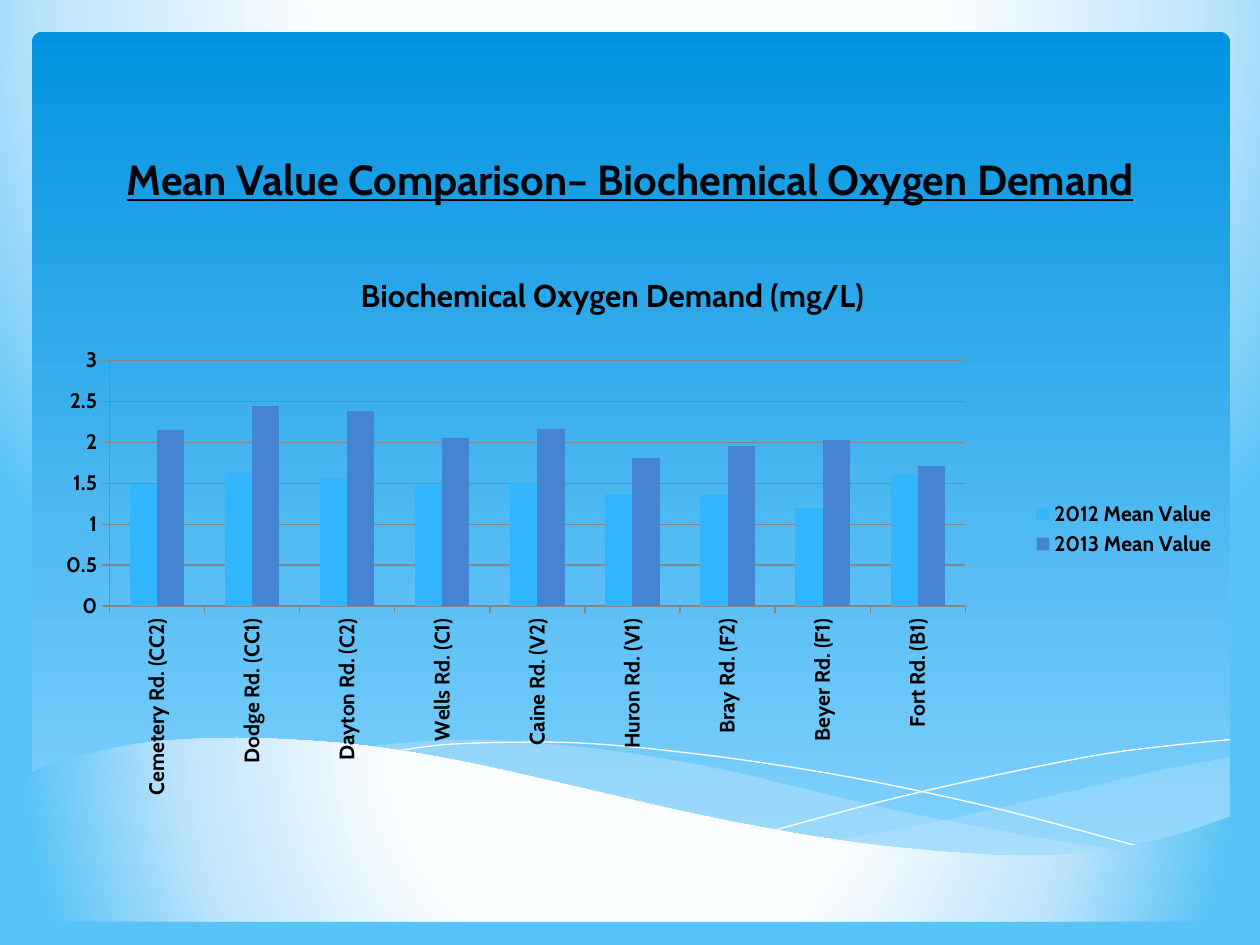
from lxml import etree
from pptx import Presentation
from pptx.chart.data import CategoryChartData
from pptx.dml.color import RGBColor
from pptx.enum.chart import XL_CHART_TYPE, XL_LEGEND_POSITION, XL_TICK_MARK
from pptx.enum.shapes import MSO_SHAPE
from pptx.enum.text import MSO_ANCHOR, MSO_AUTO_SIZE, PP_ALIGN
from pptx.oxml import parse_xml
from pptx.oxml.ns import nsdecls, qn
from pptx.util import Cm, Pt

COLUMN = XL_CHART_TYPE.COLUMN_CLUSTERED
LEGEND_RIGHT = XL_LEGEND_POSITION.RIGHT
TICK_OUT = XL_TICK_MARK.OUTSIDE
ROUNDED = MSO_SHAPE.ROUNDED_RECTANGLE
BOTTOM = MSO_ANCHOR.BOTTOM
NO_FIT = MSO_AUTO_SIZE.NONE
CENTER = PP_ALIGN.CENTER

FONT = "Cabin"
COLORS = {
    "title": "01060E", "text": "000000", "grid": "868686", "line": "FFFFFF",
    "wave": "C6E7FC", "panel_top": "0293E0", "panel_bottom": "83D3FE",
    "glow": "FAFDFE", "sky": "BEE4FC", "edge": "58C3F6",
    "2012": "31B6FD", "2013": "4584D3",
}
RGB = {name: RGBColor.from_string(value) for name, value in COLORS.items()}


def set_glow(fill, parent):
    """Fill with a radial gradient centred above the slide."""
    fill.gradient()
    old = parent.find(qn("a:gradFill"))
    stops = "".join(
        f'<a:gs pos="{pos * 1000}"><a:srgbClr val="{COLORS[name]}"/></a:gs>'
        for pos, name in ((40, "glow"), (74, "sky"), (100, "edge")))
    parent.replace(old, parse_xml(
        f'<a:gradFill rotWithShape="1" {nsdecls("a")}><a:gsLst>{stops}</a:gsLst>'
        '<a:path path="circle"><a:fillToRect l="20000" t="-40000" r="20000" '
        'b="140000"/></a:path></a:gradFill>'))


def add_curve(shapes, edges, close=True, steps=5):
    """Draw smooth edges (Catmull-Rom, points in cm) as one freeform."""
    pts = []
    for edge in edges:
        knots = [edge[0], *edge, edge[-1]]
        for a, b, c, d in zip(knots, knots[1:], knots[2:], knots[3:]):
            for t in (i / steps for i in range(steps)):
                pts.append([Cm(0.5 * (
                    2 * q + (r - p) * t + (2 * p - 5 * q + 4 * r - s) * t ** 2
                    + (3 * q - p - 3 * r + s) * t ** 3))
                    for p, q, r, s in zip(a, b, c, d)])
        pts.append([Cm(v) for v in edge[-1]])
    builder = shapes.build_freeform(*pts[0])
    builder.add_line_segments(pts[1:], close=close)
    sp = builder.convert_to_shape()
    sp.shadow.inherit = False
    if close:
        sp.line.fill.background()
    else:
        sp.fill.background()
        sp.line.color.rgb = RGB["line"]
        sp.line.width = Pt(0)
    return sp


prs = Presentation()
prs.slide_width, prs.slide_height = Cm(25.4), Cm(19.05)
slide = prs.slides.add_slide(prs.slide_layouts[5])
shapes = slide.shapes

# Background and blue panel
bg_fill = slide.background.fill
bg_fill.gradient()
set_glow(bg_fill, slide._element.cSld.find(qn("p:bg")).find(qn("p:bgPr")))
sp = shapes.add_shape(ROUNDED, Cm(0.64), Cm(0.64), Cm(24.16), Cm(16.76))
sp.adjustments[0] = 0.013
sp.shadow.inherit = False
sp.line.fill.background()
sp.fill.gradient()
sp.fill.gradient_angle = 270
for stop, name in zip(sp.fill.gradient_stops, ("panel_top", "panel_bottom")):
    stop.color.rgb = RGB[name]

# Translucent waves
right_wave = [
    [(24.8, 15.27), (23.42, 15.52), (21.89, 15.88), (19.81, 16.36),
     (18.54, 16.64), (16.81, 16.94)],
    [(16.81, 16.94), (17.93, 17.09), (19.25, 17.22), (20.7, 17.27),
     (21.95, 17.2), (23.04, 17.04), (23.98, 16.79), (24.8, 16.48)]]
middle_wave = [
    [(7.29, 15.06), (8.33, 14.96), (9.65, 14.91), (11.23, 15.01), (12.75, 15.19),
     (14.48, 15.49), (16, 15.85), (17.96, 16.31), (19.71, 16.66),
     (21.29, 16.94), (22.71, 17.15)],
    [(22.71, 17.15), (21.56, 17.25), (20.24, 17.27), (18.72, 17.2),
     (16.92, 16.97), (15.29, 16.69), (13.46, 16.31), (11.43, 15.85),
     (9.73, 15.47), (8.2, 15.19), (7.29, 15.06)]]
for edges, alpha in ((right_wave, 29), (middle_wave, 40)):
    sp = add_curve(shapes, edges)
    sp.fill.solid()
    sp.fill.fore_color.rgb = RGB["wave"]
    color = sp._element.spPr.find(qn("a:solidFill"))[0]
    etree.SubElement(color, qn("a:alpha")).set("val", str(alpha * 1000))

# White hairlines
falling = [(7.87, 15.16), (8.97, 15.01), (10.59, 14.96), (11.91, 14.99),
           (13.54, 15.14), (15.47, 15.39), (17.68, 15.77), (20.22, 16.33),
           (23.06, 17.09)]
rising = [(15.6, 16.74), (17.68, 16.18), (19.74, 15.7), (22.02, 15.24),
          (23.5, 15.04), (24.8, 14.91)]
for edge in (falling, rising):
    add_curve(shapes, [edge], close=False)

# Bottom wave
crest = [(24.8, 16.46), (23.62, 16.87), (22.23, 17.15), (20.55, 17.25),
         (18.44, 17.12), (16.46, 16.87), (14.1, 16.43), (11.35, 15.8),
         (9.27, 15.34), (7.42, 15.04), (5.84, 14.91), (4.5, 14.88),
         (3.02, 14.96), (1.93, 15.16), (1.02, 15.42), (0.58, 15.62)]
sp = add_curve(shapes, [crest, [(0.58, 18.57), (24.8, 18.57)]])
set_glow(sp.fill, sp._element.spPr)

# Title, brought in front of the waves
title = shapes.title
shapes._spTree.append(title._element)
title.left, title.top, title.width, title.height = Cm(1.9), Cm(2.34), Cm(21.6), Cm(1.9)
tf = title.text_frame
tf.text = "Mean Value Comparison– Biochemical Oxygen Demand"
tf.word_wrap = True
tf.auto_size = NO_FIT
tf.vertical_anchor = BOTTOM
p = tf.paragraphs[0]
p.alignment = CENTER
font = p.runs[0].font
font.name, font.size, font.bold, font.underline = FONT, Pt(24), True, True
font.color.rgb = RGB["title"]

# Chart
data = CategoryChartData()
data.categories = [
    "Cemetery Rd. (CC2)", "Dodge Rd. (CC1)", "Dayton Rd. (C2)",
    "Wells Rd. (C1)", "Caine Rd. (V2)", "Huron Rd. (V1)",
    "Bray Rd. (F2)", "Beyer Rd. (F1)", "Fort Rd. (B1)"]
data.add_series("2012 Mean Value", (1.49, 1.63, 1.56, 1.47, 1.51, 1.37, 1.36, 1.2, 1.61))
data.add_series("2013 Mean Value", (2.15, 2.44, 2.38, 2.05, 2.16, 1.81, 1.96, 2.03, 1.71))
chart = shapes.add_chart(COLUMN, Cm(0.64), Cm(4.95), Cm(24.13), Cm(11.43), data).chart
chart.font.name, chart.font.size = FONT, Pt(10)
chart.font.color.rgb = RGB["text"]

plot = chart.plots[0]
plot.gap_width, plot.overlap = 150, 0
plot.vary_by_categories = False
for series, name in zip(plot.series, ("2012", "2013")):
    series.format.fill.solid()
    series.format.fill.fore_color.rgb = RGB[name]

# Chart title, legend and axes
chart.has_title = True
tf = chart.chart_title.text_frame
tf.text = "Biochemical Oxygen Demand (mg/L)"
title_font = tf.paragraphs[0].runs[0].font
chart.chart_title.include_in_layout = False
chart.has_legend = True
chart.legend.position = LEGEND_RIGHT
chart.legend.include_in_layout = False
cat_axis, val_axis = chart.category_axis, chart.value_axis
val_axis.minimum_scale, val_axis.maximum_scale, val_axis.major_unit = 0, 3, 0.5
val_axis.has_major_gridlines = True
val_axis.major_gridlines.format.line.color.rgb = RGB["grid"]
for axis in (cat_axis, val_axis):
    axis.major_tick_mark = TICK_OUT
    axis.format.line.color.rgb = RGB["grid"]
for font, size in ((title_font, 18), (chart.legend.font, 12),
                   (cat_axis.tick_labels.font, 12), (val_axis.tick_labels.font, 12)):
    font.name, font.size, font.bold = FONT, Pt(size), True
    font.color.rgb = RGB["text"]
body = cat_axis._element.find(qn("c:txPr")).find(qn("a:bodyPr"))
body.set("rot", "-5400000")
body.set("vert", "horz")

# Fixed places of the plot area and the chart title
places = (
    (chart._chartSpace.chart.plotArea, 0, "inner",
     {"x": 0.065, "y": 0.203, "w": 0.715, "h": 0.433}),
    (chart.chart_title._element, 1, None, {"x": 0.27, "y": 0.04}))
for parent, index, target, box in places:
    for old in parent.findall(qn("c:layout")):
        parent.remove(old)
    inner = f'<c:layoutTarget val="{target}"/>' if target else ""
    inner += "".join(f'<c:{k}Mode val="edge"/>' for k in "xy")
    inner += "".join(f'<c:{k} val="{v}"/>' for k, v in box.items())
    parent.insert(index, parse_xml(
        f'<c:layout {nsdecls("c")}><c:manualLayout>{inner}</c:manualLayout></c:layout>'))

prs.save("out.pptx")
